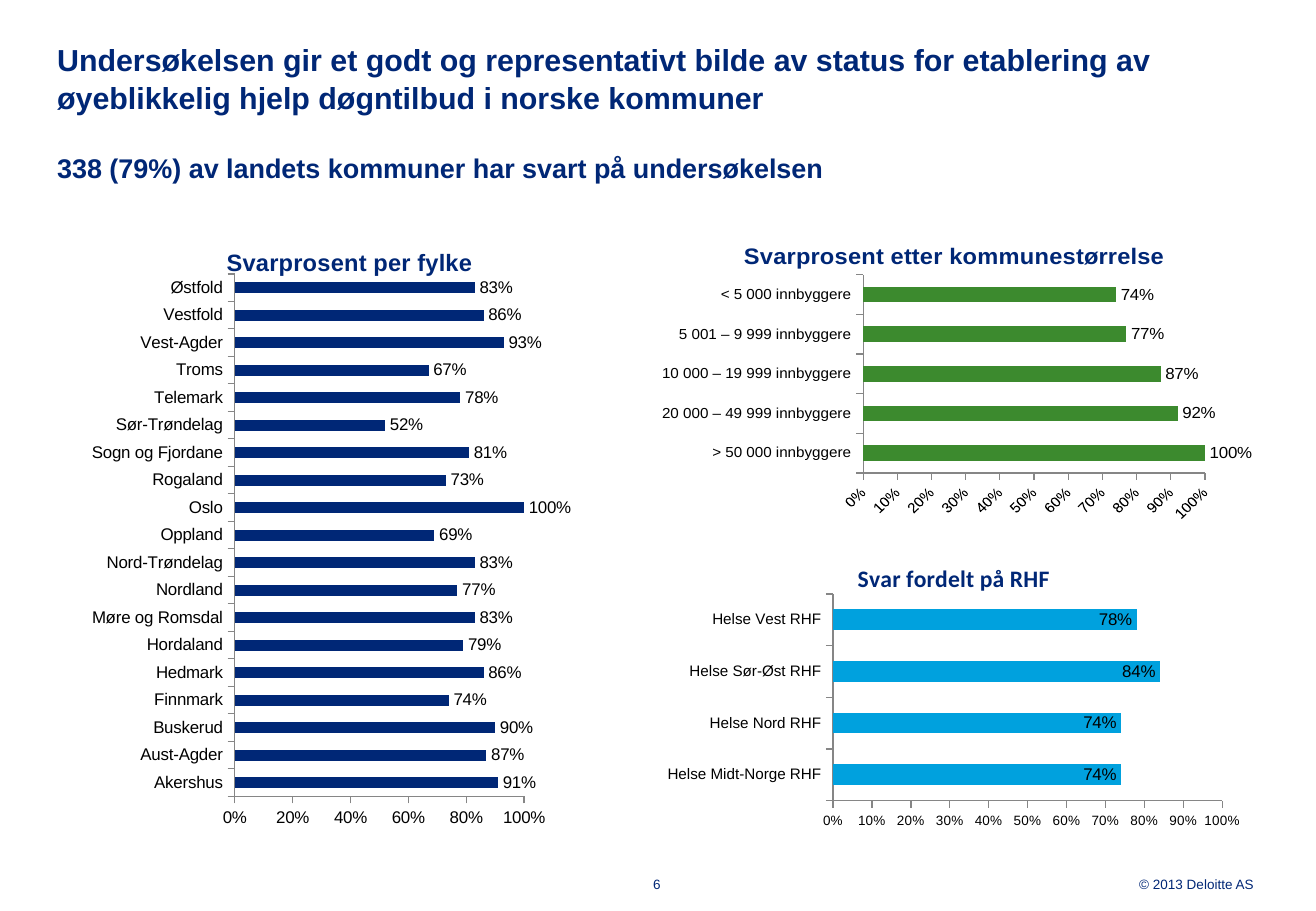
from lxml import etree
from pptx import Presentation
from pptx import util as u
from pptx.chart.data import CategoryChartData
from pptx.dml.color import RGBColor
from pptx.enum import chart as ch, text
from pptx.oxml.ns import qn

WIDTH, HEIGHT = 10.83, 7.5
NAVY, GREEN, SKY, BLACK, GREY = "002776", "3C8A2E", "00A1DE", "000000", "868686"

HEADING = ("Undersøkelsen gir et godt og representativt bilde av status for etablering av "
           "øyeblikkelig hjelp døgntilbud i norske kommuner")
HEADING_AREA = (4.34, 4.27, 91.32, 8.67)  # areas: left, top, width, height in % of the slide

LEFT, CENTER, RIGHT = text.PP_ALIGN.LEFT, text.PP_ALIGN.CENTER, text.PP_ALIGN.RIGHT
TOP, MIDDLE, BOTTOM = (text.MSO_ANCHOR.TOP, text.MSO_ANCHOR.MIDDLE, text.MSO_ANCHOR.BOTTOM)

# wording, area, size, bold, alignment, anchor, line spacing, wrap
LINES = [
    ("338 (79%) av landets kommuner har svart på undersøkelsen",
     (4.34, 16.27, 91.41, 3.87), 16, True, LEFT, BOTTOM, 1.06, True),
    ("6", (48.01, 95.87, 3.79, 2), 8, False, CENTER, MIDDLE, u.Pt(11.2), True),
    ("© 2013 Deloitte AS", (86.43, 95.87, 8.86, 2), 8, False, RIGHT, MIDDLE, u.Pt(11.3), False),
]

OUTSIDE, INSIDE = ch.XL_LABEL_POSITION.OUTSIDE_END, ch.XL_LABEL_POSITION.INSIDE_END

# percentages run from the top bar down; title_at and plot are in % of the chart
CHARTS = [
    dict(title="Svarprosent per fylke", font="Arial", area=(3.97, 24, 44.6, 67.47),
         title_at=(29, 4), plot=(31.1, 9, 49.3, 85), color=NAVY, labels=OUTSIDE,
         name_size=10, scale_size=10, step=0.2, overlay=True,
         shares={"Østfold": 83, "Vestfold": 86, "Vest-Agder": 93, "Troms": 67,
                 "Telemark": 78, "Sør-Trøndelag": 52, "Sogn og Fjordane": 81,
                 "Rogaland": 73, "Oslo": 100, "Oppland": 69, "Nord-Trøndelag": 83,
                 "Nordland": 77, "Møre og Romsdal": 83, "Hordaland": 79, "Hedmark": 86,
                 "Finnmark": 74, "Buskerud": 90, "Aust-Agder": 87, "Akershus": 91}),
    dict(title="Svarprosent etter kommunestørrelse", font="Arial",
         area=(49.86, 24, 45.34, 33.33),
         title_at=(14, 6.5), plot=(34.7, 19.5, 57.3, 68.8), color=GREEN, labels=OUTSIDE,
         name_size=9, scale_size=9, step=0.1, overlay=False,
         shares={"< 5 000 innbyggere": 74, "5 001 – 9 999 innbyggere": 77,
                 "10 000 – 19 999 innbyggere": 87, "20 000 – 49 999 innbyggere": 92,
                 "> 50 000 innbyggere": 100}),
    dict(title="Svar fordelt på RHF", font="Calibri", area=(49.86, 58.4, 45.43, 33.33),
         title_at=(33, 8.5), plot=(29.6, 20.4, 65.1, 68.1), color=SKY, labels=INSIDE,
         name_size=9, scale_size=8, step=0.1, overlay=False,
         shares={"Helse Vest RHF": 78, "Helse Sør-Øst RHF": 84,
                 "Helse Nord RHF": 74, "Helse Midt-Norge RHF": 74}),
]


def rgb(color):
    return RGBColor.from_string(color)


def place(area):
    """Turn percentages of the slide into lengths."""
    return [u.Inches(part * side / 100) for part, side in zip(area, (WIDTH, HEIGHT) * 2)]


def set_font(font, size, color, name="Arial", bold=False):
    for key, value in dict(name=name, size=u.Pt(size), bold=bold).items():
        setattr(font, key, value)
    font.color.rgb = rgb(color)


def write(frame, wording, size, bold, align, anchor, spacing, wrap):
    frame.text = wording
    settings = dict(margin_left=0, margin_top=0, margin_right=0, margin_bottom=0,
                    word_wrap=wrap, vertical_anchor=anchor, auto_size=text.MSO_AUTO_SIZE.NONE)
    for key, value in settings.items():
        setattr(frame, key, value)
    paragraph = frame.paragraphs[0]
    paragraph.alignment, paragraph.line_spacing = align, spacing
    set_font(paragraph.runs[0].font, size, NAVY, bold=bold)


def set_layout(parent, index, percents, inner=False):
    """Give a chart part a fixed place, in % of the chart."""
    for old in parent.findall(qn("c:layout")):
        parent.remove(old)
    layout = etree.Element(qn("c:layout"))
    parent.insert(index, layout)
    manual = etree.SubElement(layout, qn("c:manualLayout"))
    values = [("layoutTarget", "inner")] if inner else []
    values += [("xMode", "edge"), ("yMode", "edge")]
    values += [(key, str(round(part / 100, 3))) for key, part in zip("xywh", percents)]
    for key, value in values:
        etree.SubElement(manual, qn("c:" + key)).set("val", value)


def add_bars(slide, title, font, area, title_at, plot, color, labels,
             name_size, scale_size, step, overlay, shares):
    data = CategoryChartData(number_format="0%")
    data.categories = list(reversed(shares))
    data.add_series("Svarprosent", [share / 100 for share in reversed(shares.values())])
    chart = slide.shapes.add_chart(ch.XL_CHART_TYPE.BAR_CLUSTERED, *place(area), data).chart
    chart.has_legend = False
    set_font(chart.font, 10, BLACK)

    caption = chart.chart_title
    caption.text_frame.text = title
    set_font(caption.text_frame.paragraphs[0].runs[0].font, 14, NAVY, font, True)
    caption.include_in_layout = overlay
    root = chart.element if hasattr(chart, "element") else chart._chartSpace
    set_layout(root.find(".//" + qn("c:title")), 1, title_at)
    set_layout(root.find(".//" + qn("c:plotArea")), 0, plot, inner=True)

    names, scale = chart.category_axis, chart.value_axis
    for axis, size in ((names, name_size), (scale, scale_size)):
        axis.has_major_gridlines = False
        axis.major_tick_mark = ch.XL_TICK_MARK.OUTSIDE
        axis.format.line.color.rgb = rgb(GREY)
        set_font(axis.tick_labels.font, size, BLACK)
    scale.minimum_scale, scale.maximum_scale, scale.major_unit = 0, 1, step

    bars = chart.plots[0]
    bars.gap_width, bars.vary_by_categories = 150, False
    fill = bars.series[0].format.fill
    fill.solid()
    fill.fore_color.rgb = rgb(color)
    bars.has_data_labels = True
    bars.data_labels.show_value = True
    bars.data_labels.position = labels
    set_font(bars.data_labels.font, 10, BLACK)
    for numbers in (scale.tick_labels, bars.data_labels):
        numbers.number_format, numbers.number_format_is_linked = "0%", False


def main():
    deck = Presentation()
    deck.slide_width, deck.slide_height = u.Inches(WIDTH), u.Inches(HEIGHT)
    slide = deck.slides.add_slide(deck.slide_layouts[5])
    heading = slide.shapes.title
    heading.left, heading.top, heading.width, heading.height = place(HEADING_AREA)
    write(heading.text_frame, HEADING, 18, True, LEFT, TOP, 1.06, True)
    for wording, area, *style in LINES:
        write(slide.shapes.add_textbox(*place(area)).text_frame, wording, *style)
    for bars in CHARTS:
        add_bars(slide, **bars)
    deck.save("out.pptx")


if __name__ == "__main__":
    main()
